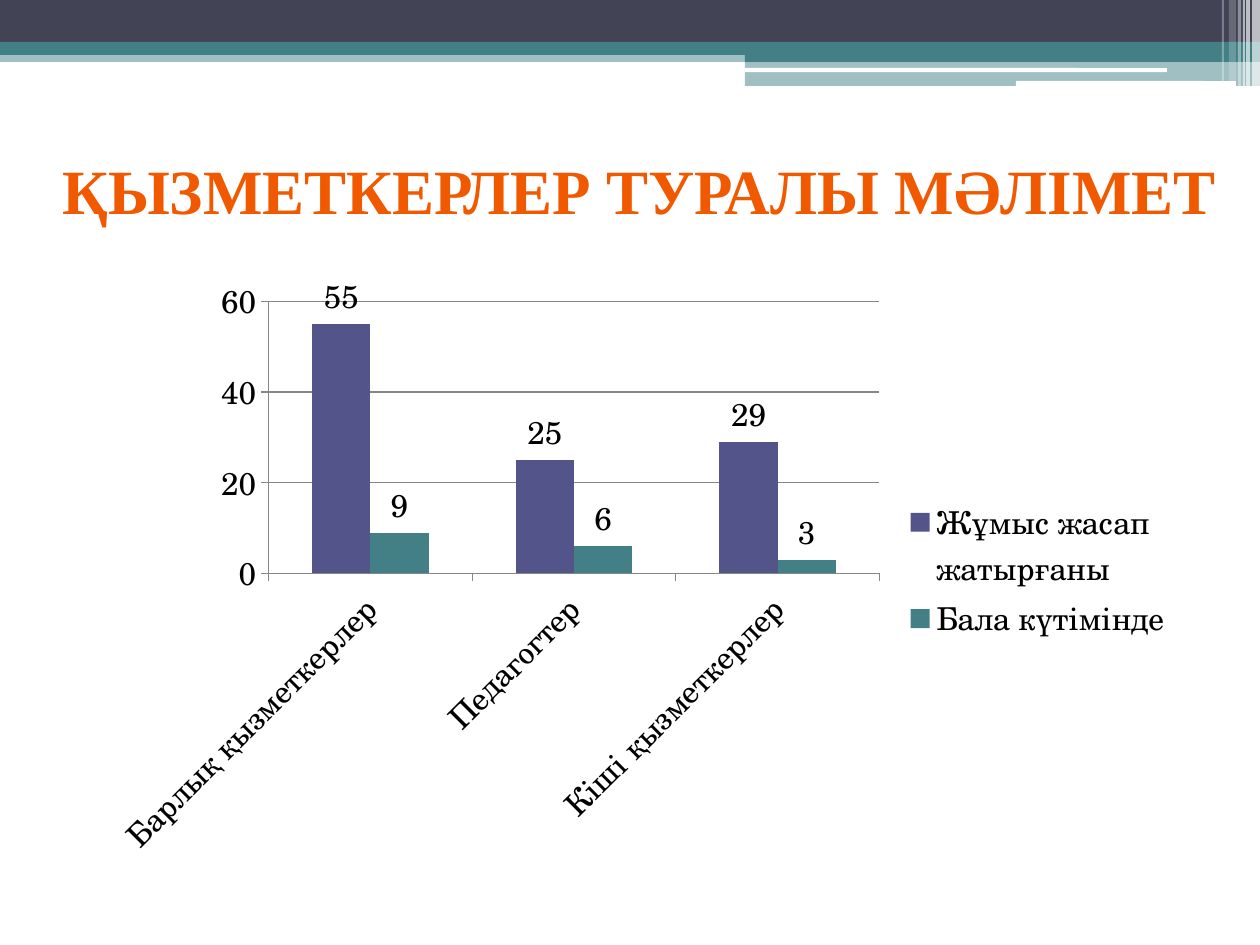
from lxml import etree
from pptx import Presentation, util as u
from pptx.chart.data import CategoryChartData
from pptx.dml.color import RGBColor
from pptx.enum import chart as ch, shapes, text
from pptx.oxml import ns

PX = 914400 / 126
COLORS = {"navy": "424456", "teal": "438086", "white": "FFFFFF", "violet": "53548A",
          "orange": "F15900", "black": "000000", "grid": "868686"}
BANDS = [
    (0, 50, 1260, 12, "teal", 50), (0, 0, 1260, 42, "navy", 100),
    (0, 42, 1260, 13, "teal", 100), (745, 49, 515, 13, "teal", 100),
    (745, 61, 515, 25, "teal", 50),
]
GAPS = [(745, 68, 422, 4), (1016, 81, 220, 5)]
STRIPES = [(1252, 8, 86, 65), (1246, 4, 86, 65), (1243, 2, 86, 60),
           (1238, 3, 86, 40), (1229, 7, 81, 20), (1222, 2, 81, 30)]
CATEGORIES = ["Барлық қызметкерлер", "Педагогтер", "Кіші қызметкерлер"]
STAFF = [("Жұмыс жасап жатырғаны", (55, 25, 29), "violet"),
         ("Бала күтімінде", (9, 6, 3), "teal")]


def box(*lengths):
    """Turn px lengths into EMU."""
    return [u.Emu(round(length * PX)) for length in lengths]


def color(name):
    """Look up a named colour."""
    return RGBColor.from_string(COLORS[name])


def add_band(slide, left, top, width, height, fill, opacity=100, rounded=False):
    """Add a borderless bar with the given opacity in percent."""
    kind = shapes.MSO_SHAPE.ROUNDED_RECTANGLE if rounded else shapes.MSO_SHAPE.RECTANGLE
    band = slide.shapes.add_shape(kind, *box(left, top, width, height))
    band.shadow.inherit = False
    band.line.fill.background()
    band.fill.solid()
    band.fill.fore_color.rgb = color(fill)
    if opacity < 100:
        tint = band._element.spPr.find(".//" + ns.qn("a:srgbClr"))
        etree.SubElement(tint, ns.qn("a:alpha"), val=str(opacity * 1000))


def place(part, index, inner=False, **fractions):
    """Pin a chart part at fractions of the chart area."""
    for old in part.findall(ns.qn("c:layout")):
        part.remove(old)
    layout = etree.Element(ns.qn("c:layout"))
    manual = etree.SubElement(layout, ns.qn("c:manualLayout"))
    if inner:
        etree.SubElement(manual, ns.qn("c:layoutTarget"), val="inner")
    for mode in ("xMode", "yMode"):
        etree.SubElement(manual, ns.qn("c:" + mode), val="edge")
    for name, value in fractions.items():
        etree.SubElement(manual, ns.qn("c:" + name), val=str(value))
    part.insert(index, layout)


def style_axes(chart):
    """Set axis lines, ticks, gridlines and slanted category names."""
    for axis in (chart.category_axis, chart.value_axis):
        axis.major_tick_mark = ch.XL_TICK_MARK.OUTSIDE
        axis.minor_tick_mark = ch.XL_TICK_MARK.NONE
        axis.format.line.color.rgb = color("grid")
        axis.format.line.width = u.Pt(0.75)
    chart.value_axis.has_major_gridlines = True
    gridline = chart.value_axis.major_gridlines.format.line
    gridline.color.rgb = color("grid")
    gridline.width = u.Pt(0.75)
    names = chart.category_axis.tick_labels
    names.font.size = u.Pt(18)
    body = chart.category_axis._element.find(".//" + ns.qn("a:bodyPr"))
    body.set("rot", "-2700000")
    body.set("vert", "horz")


def add_staff_chart(slide):
    """Add the clustered columns of staff numbers."""
    staff = CategoryChartData()
    staff.categories = CATEGORIES
    for name, values, _ in STAFF:
        staff.add_series(name, values)
    chart = slide.shapes.add_chart(ch.XL_CHART_TYPE.COLUMN_CLUSTERED,
                                   *box(94, 265, 1091, 605), staff).chart
    chart.has_title = False
    chart.font.name = "TeX Gyre Schola"
    chart.font.size = u.Pt(18)
    chart.font.color.rgb = color("black")
    columns = chart.plots[0]
    columns.vary_by_categories = False
    columns.gap_width = 150
    columns.overlap = 0
    for series, (_, _, fill) in zip(columns.series, STAFF):
        series.format.fill.solid()
        series.format.fill.fore_color.rgb = color(fill)
        series.data_labels.show_value = True
        series.data_labels.position = ch.XL_LABEL_POSITION.OUTSIDE_END
    style_axes(chart)
    chart.has_legend = True
    chart.legend.position = ch.XL_LEGEND_POSITION.RIGHT
    chart.legend.include_in_layout = False
    plot_area = chart._chartSpace.find(".//" + ns.qn("c:plotArea"))
    place(plot_area, 0, inner=True, x=0.16, y=0.06, w=0.56, h=0.45)
    place(chart.legend._element, 1, x=0.74, y=0.38, w=0.25, h=0.25)


def add_title(slide, wording):
    """Add the bold heading on one line."""
    heading = slide.shapes.add_textbox(*box(44, 145, 1191, 89)).text_frame
    heading.word_wrap = False
    heading.auto_size = text.MSO_AUTO_SIZE.SHAPE_TO_FIT_TEXT
    line = heading.paragraphs[0]
    line.alignment = text.PP_ALIGN.CENTER
    run = line.add_run()
    run.text = wording
    run.font.name = "Times New Roman"
    run.font.size = u.Pt(36)
    run.font.bold = True
    run.font.color.rgb = color("orange")


def main():
    """Build the slide and save it."""
    deck = Presentation()
    deck.slide_width, deck.slide_height = box(1260, 945)
    slide = deck.slides.add_slide(deck.slide_layouts[6])
    for band in BANDS:
        add_band(slide, *band)
    for gap in GAPS:
        add_band(slide, *gap, "white", rounded=True)
    for left, width, height, opacity in STRIPES:
        add_band(slide, left, 0, width, height, "white", opacity)
    add_staff_chart(slide)
    add_title(slide, "ҚЫЗМЕТКЕРЛЕР ТУРАЛЫ МӘЛІМЕТ")
    deck.save("out.pptx")


if __name__ == "__main__":
    main()
